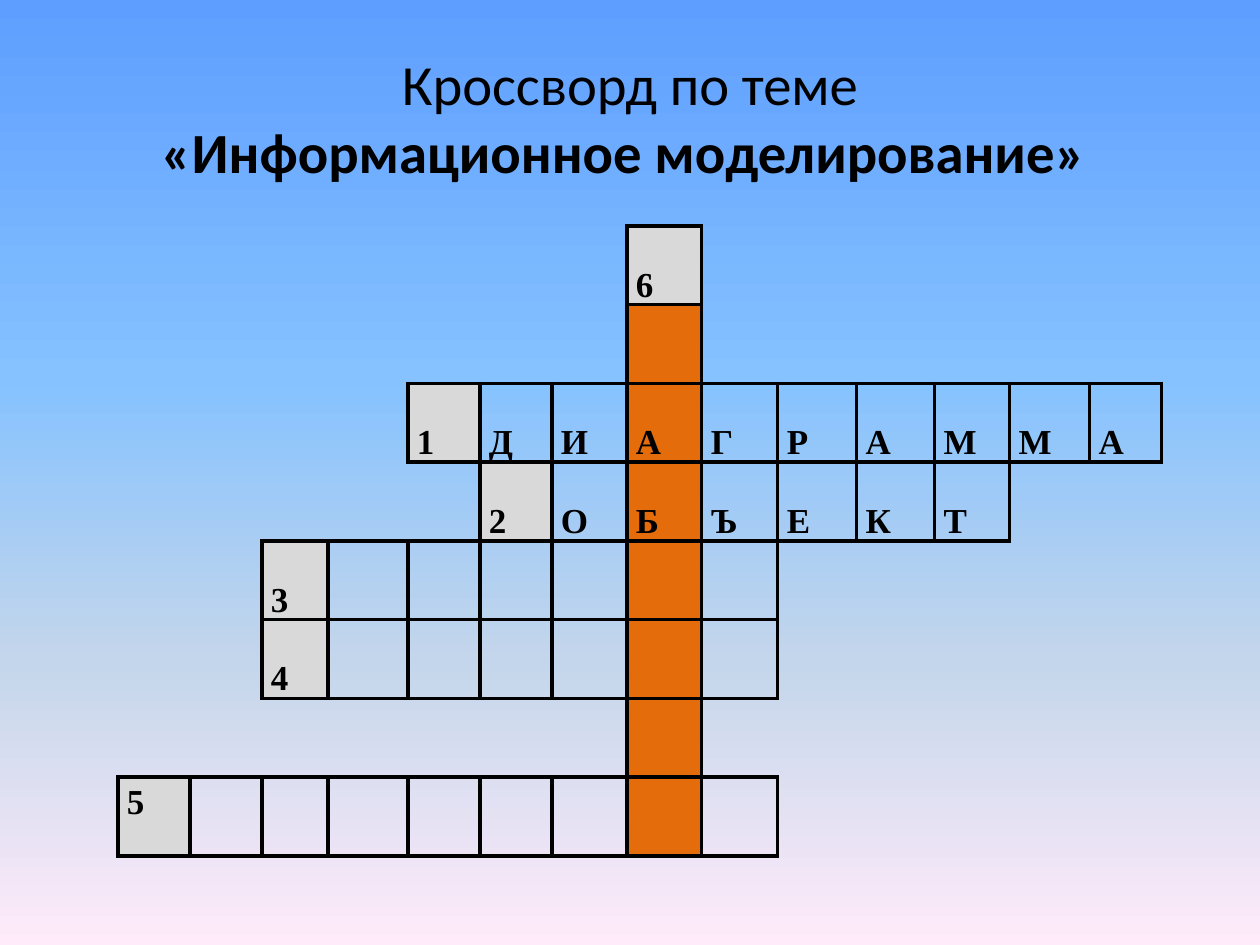
"""Build a slide with a partly solved crossword on information modelling."""
from dataclasses import dataclass
from itertools import pairwise

from lxml import etree
from pptx import Presentation
from pptx import util as u
from pptx.dml.color import RGBColor
from pptx.enum import text
from pptx.oxml.ns import qn

PX = 914400 / 126
BLACK, GREY, ORANGE = "000000", "D9D9D9", "E46C0A"
COLUMN_EDGES = [118, 190, 262, 328, 408, 480, 552, 627, 702, 778, 857, 935, 1010, 1090, 1162]
TOP, HEIGHT, ROWS = 226, 630, 8
KEY_COLUMN = 7
BACKGROUND = [(0, "5E9EFF"), (40, "85C2FF"), (70, "C4D6EB"), (100, "FFEBFA")]
SIDES = {"L": (0, -1), "R": (0, 1), "T": (-1, 0), "B": (1, 0)}


@dataclass(frozen=True)
class Entry:
    """One row of the crossword: its clue number, letters and place."""
    row: int
    start: int
    length: int
    number: str = ""
    letters: str = ""


ENTRIES = [
    Entry(0, 7, 1, "6"),
    Entry(1, 7, 1),
    Entry(2, 4, 10, "1", "ДИАГРАММА"),
    Entry(3, 5, 7, "2", "ОБЪЕКТ"),
    Entry(4, 2, 7, "3"),
    Entry(5, 2, 7, "4"),
    Entry(6, 7, 1),
    Entry(7, 0, 9, "5"),
]


def px(length: float) -> u.Emu:
    """Turn pixels into EMU."""
    return u.Emu(round(length * PX))


def rgb(colour: str) -> RGBColor:
    """Turn a hex string into a colour."""
    return RGBColor.from_string(colour)


def paint_background(page) -> None:
    """Fill the page with a vertical gradient."""
    fill = page.background.fill
    fill.gradient()
    fill.gradient_angle = 270
    stops = next(page.element.iter(qn("a:gsLst")))
    for stop in list(stops):
        stops.remove(stop)
    for percent, colour in BACKGROUND:
        stop = etree.SubElement(stops, qn("a:gs"), pos=str(percent * 1000))
        etree.SubElement(stop, qn("a:srgbClr"), val=colour)


def set_font(para, name: str, size: float, bold: bool | None = None) -> None:
    """Give a paragraph its black font."""
    para.font.name, para.font.size, para.font.bold = name, u.Pt(size), bold
    para.font.color.rgb = rgb(BLACK)


def add_title(page) -> None:
    """Write the two-line title."""
    box = page.shapes.add_textbox(px(63), px(38), px(1134), px(158))
    frame = box.text_frame
    frame.word_wrap = True
    frame.vertical_anchor = text.MSO_ANCHOR.MIDDLE
    para = frame.paragraphs[0]
    para.alignment = text.PP_ALIGN.CENTER
    set_font(para, "Calibri", 32.4)
    para.add_run().text = "Кроссворд по теме"
    para.add_line_break()
    span = para.add_run()
    span.text = "«Информационное моделирование» "
    span.font.bold = True


def set_border(cell, side: str, visible: bool) -> None:
    """Draw or hide one side of a cell."""
    properties = cell._tc.get_or_add_tcPr()
    line = etree.SubElement(properties, qn(f"a:ln{side}"), w=str(u.Pt(2.25)))
    if visible:
        fill = etree.SubElement(line, qn("a:solidFill"))
        etree.SubElement(fill, qn("a:srgbClr"), val=BLACK)
    else:
        etree.SubElement(line, qn("a:noFill"))


def style_cell(cell, label: str, colour: str | None, anchor) -> None:
    """Fill a cell and write its number or letter."""
    if colour:
        cell.fill.solid()
        cell.fill.fore_color.rgb = rgb(colour)
    else:
        cell.fill.background()
    cell.margin_left = cell.margin_right = px(9)
    cell.margin_top = cell.margin_bottom = 0
    cell.vertical_anchor = anchor
    para = cell.text_frame.paragraphs[0]
    para.line_spacing = 1.15
    set_font(para, "Times New Roman", 20, True)
    if label:
        para.add_run().text = label


def add_crossword(page) -> None:
    """Lay the entries out in one table."""
    left, right = COLUMN_EDGES[0], COLUMN_EDGES[-1]
    columns = len(COLUMN_EDGES) - 1
    table = page.shapes.add_table(
        ROWS, columns, px(left), px(TOP), px(right - left), px(HEIGHT)).table
    table.first_row = table.horz_banding = False
    for column, (start, end) in zip(table.columns, pairwise(COLUMN_EDGES)):
        column.width = px(end - start)
    for row in table.rows:
        row.height = px(HEIGHT / ROWS)

    used = {(entry.row, entry.start + i) for entry in ENTRIES for i in range(entry.length)}
    labels, numbered = {}, set()
    for entry in ENTRIES:
        if entry.number:
            numbered.add((entry.row, entry.start))
            for i, label in enumerate(entry.number + entry.letters):
                labels[entry.row, entry.start + i] = label

    for row in range(ROWS):
        anchor = text.MSO_ANCHOR.TOP if row == ROWS - 1 else text.MSO_ANCHOR.BOTTOM
        for column in range(columns):
            place = row, column
            cell = table.cell(row, column)
            for side, (down, across) in SIDES.items():
                neighbour = row + down, column + across
                set_border(cell, side, place in used or neighbour in used)
            colour = GREY if place in numbered else ORANGE if column == KEY_COLUMN else None
            style_cell(cell, labels.get(place, ""), colour, anchor)


def main() -> None:
    """Build and save the deck."""
    deck = Presentation()
    deck.slide_width, deck.slide_height = px(1260), px(945)
    page = deck.slides.add_slide(deck.slide_layouts[6])
    paint_background(page)
    add_title(page)
    add_crossword(page)
    deck.save("out.pptx")


if __name__ == "__main__":
    main()
